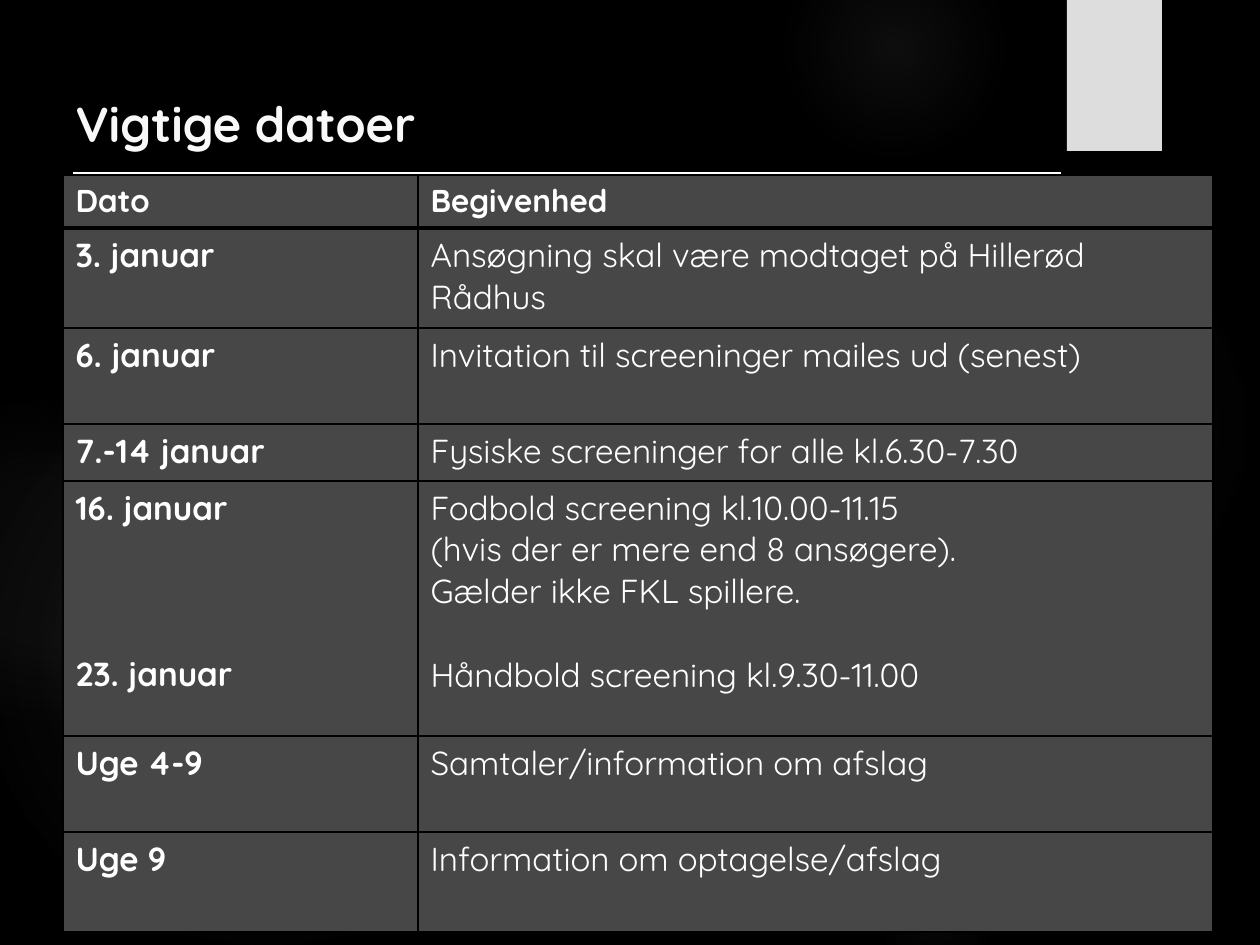
"""Builds a dark slide with a table of important dates."""
from dataclasses import dataclass

from lxml import etree
from pptx import Presentation
from pptx import util as u
from pptx.dml.color import RGBColor
from pptx.enum import shapes, text
from pptx.oxml.ns import nsdecls, qn
from pptx.oxml import parse_xml

EMU_PER_PX = 914400 / 126


@dataclass(frozen=True)
class Theme:
    """Colours, font and type sizes of the slide."""
    back: str = "000000"
    glow: str = "666666"
    tab: str = "DDDDDD"
    rule: str = "FFFFFF"
    title: str = "F8F8F8"
    body: str = "FFFFFF"
    cell: str = "474747"
    font: str = "Quicksand"
    title_pt: int = 28
    head_pt: int = 18
    body_pt: int = 19


@dataclass(frozen=True)
class Glow:
    """A soft round light, with (position, opacity) stops in percent."""
    left: int
    top: int
    size: int
    stops: tuple


@dataclass(frozen=True)
class Row:
    """A table row; last_gap holds the space before each cell's last line."""
    height: int
    date: tuple
    event: tuple
    last_gap: tuple = (0, 0)


THEME = Theme()
GLOWS = (
    Glow(868, 231, 388, ((0, 7), (36, 6), (69, 0))),
    Glow(784, -63, 221, ((0, 14), (36, 7), (73, 0))),
    Glow(868, 840, 136, ((0, 9), (36, 5), (66, 0))),
    Glow(-21, 368, 577, ((0, 11), (36, 10), (75, 0))),
    Glow(-116, 399, 325, ((0, 8), (36, 8), (72, 0))),
)
COLUMNS = (355, 795)
ROWS = (
    Row(53, ("Dato",), ("Begivenhed",)),
    Row(100, ("3. januar",), ("Ansøgning skal være modtaget på Hillerød Rådhus",)),
    Row(96, ("6. januar",), ("Invitation til screeninger mailes ud (senest)",)),
    Row(57, ("7.-14 januar",), ("Fysiske screeninger for alle kl.6.30-7.30",)),
    Row(255, ("16. januar", "23. januar"),
        ("Fodbold screening kl.10.00-11.15", "(hvis der er mere end 8 ansøgere).",
         "Gælder ikke FKL spillere.", "Håndbold screening kl.9.30-11.00"),
        (125, 42)),
    Row(96, ("Uge 4-9",), ("Samtaler/information om afslag",)),
    Row(100, ("Uge 9",), ("Information om optagelse/afslag",)),
)


def px(n: int) -> u.Emu:
    """Turn pixels into EMU."""
    return u.Emu(round(n * EMU_PER_PX))


def rgb(code: str) -> RGBColor:
    """Turn a hex code into a colour."""
    return RGBColor.from_string(code)


def style(p, size: int, color: str, bold: bool) -> None:
    """Format every run of a paragraph."""
    for r in p.runs:
        r.font.name = THEME.font
        r.font.size = u.Pt(size)
        r.font.bold = bold
        r.font.color.rgb = rgb(color)


def add_plain(s, kind, left: int, top: int, width: int, height: int):
    """Add a shape without outline or shadow."""
    sp = s.shapes.add_shape(kind, px(left), px(top), px(width), px(height))
    sp.shadow.inherit = False
    sp.line.fill.background()
    return sp


def add_glow(s, glow: Glow) -> None:
    """Add an ellipse that fades out from its centre."""
    sp = add_plain(s, shapes.MSO_SHAPE.OVAL, glow.left, glow.top, glow.size, glow.size)
    stops = "".join(
        f'<a:gs pos="{pos * 1000}"><a:srgbClr val="{THEME.glow}">'
        f'<a:alpha val="{alpha * 1000}"/></a:srgbClr></a:gs>'
        for pos, alpha in glow.stops)
    fill = parse_xml(
        f'<a:gradFill {nsdecls("a")}><a:gsLst>{stops}</a:gsLst><a:path path="circle">'
        '<a:fillToRect l="50000" t="50000" r="50000" b="50000"/></a:path></a:gradFill>')
    sp._element.spPr.find(qn("a:prstGeom")).addnext(fill)


def add_rule(s, left: int, right: int, y: int) -> None:
    """Add the thin line under the title."""
    cx = s.shapes.add_connector(
        shapes.MSO_CONNECTOR.STRAIGHT, px(left), px(y), px(right), px(y))
    cx.line.color.rgb = rgb(THEME.rule)
    cx.line.width = u.Pt(0.75)
    etree.SubElement(cx._element.spPr, qn("a:effectLst"))


def set_borders(cell, top: int, bottom: int) -> None:
    """Give a cell borders, with top and bottom widths in points."""
    for side, width in (("L", 1), ("R", 1), ("T", top), ("B", bottom)):
        cell._tc.get_or_add_tcPr().append(parse_xml(
            f'<a:ln{side} {nsdecls("a")} w="{u.Pt(width)}"><a:solidFill>'
            f'<a:srgbClr val="{THEME.back}"/></a:solidFill></a:ln{side}>'))


def fill_cell(cell, lines: tuple, last_gap: int, size: int, bold: bool) -> None:
    """Write and format the lines of a cell."""
    cell.fill.solid()
    cell.fill.fore_color.rgb = rgb(THEME.cell)
    tf = cell.text_frame
    tf.text = "\n".join(lines)
    for p in tf.paragraphs:
        style(p, size, THEME.body, bold)
    if last_gap:
        tf.paragraphs[-1].space_before = px(last_gap)


def add_dates(s, left: int, top: int) -> None:
    """Add the table of dates and events."""
    table = s.shapes.add_table(
        len(ROWS), len(COLUMNS), px(left), px(top), px(sum(COLUMNS)),
        px(sum(row.height for row in ROWS))).table
    for column, width in zip(table.columns, COLUMNS):
        column.width = px(width)
    for i, row in enumerate(ROWS):
        table.rows[i].height = px(row.height)
        size = THEME.body_pt if i else THEME.head_pt
        for j, lines in enumerate((row.date, row.event)):
            cell = table.cell(i, j)
            set_borders(cell, 3 if i == 1 else 1, 3 if i == 0 else 1)
            fill_cell(cell, lines, row.last_gap[j], size, i == 0 or j == 0)


def set_title(s, title: str) -> None:
    """Place and format the title."""
    sp = s.shapes.title
    sp.left, sp.top, sp.width, sp.height = px(63), px(87), px(1071), px(79)
    tf = sp.text_frame
    tf.text = title
    tf.vertical_anchor = text.MSO_ANCHOR.TOP
    p = tf.paragraphs[0]
    p.alignment = text.PP_ALIGN.LEFT
    style(p, THEME.title_pt, THEME.title, True)


def main() -> None:
    """Build and save the slide."""
    prs = Presentation()
    prs.slide_width, prs.slide_height = px(1260), px(945)
    s = prs.slides.add_slide(prs.slide_layouts.get_by_name("Title Only"))
    s.background.fill.solid()
    s.background.fill.fore_color.rgb = rgb(THEME.back)
    for glow in GLOWS:
        add_glow(s, glow)
    tab = add_plain(s, shapes.MSO_SHAPE.RECTANGLE, 1067, 0, 95, 151)
    tab.fill.solid()
    tab.fill.fore_color.rgb = rgb(THEME.tab)
    add_rule(s, 73, 1061, 173)
    set_title(s, "Vigtige datoer")
    add_dates(s, 63, 175)
    prs.save("out.pptx")


if __name__ == "__main__":
    main()
